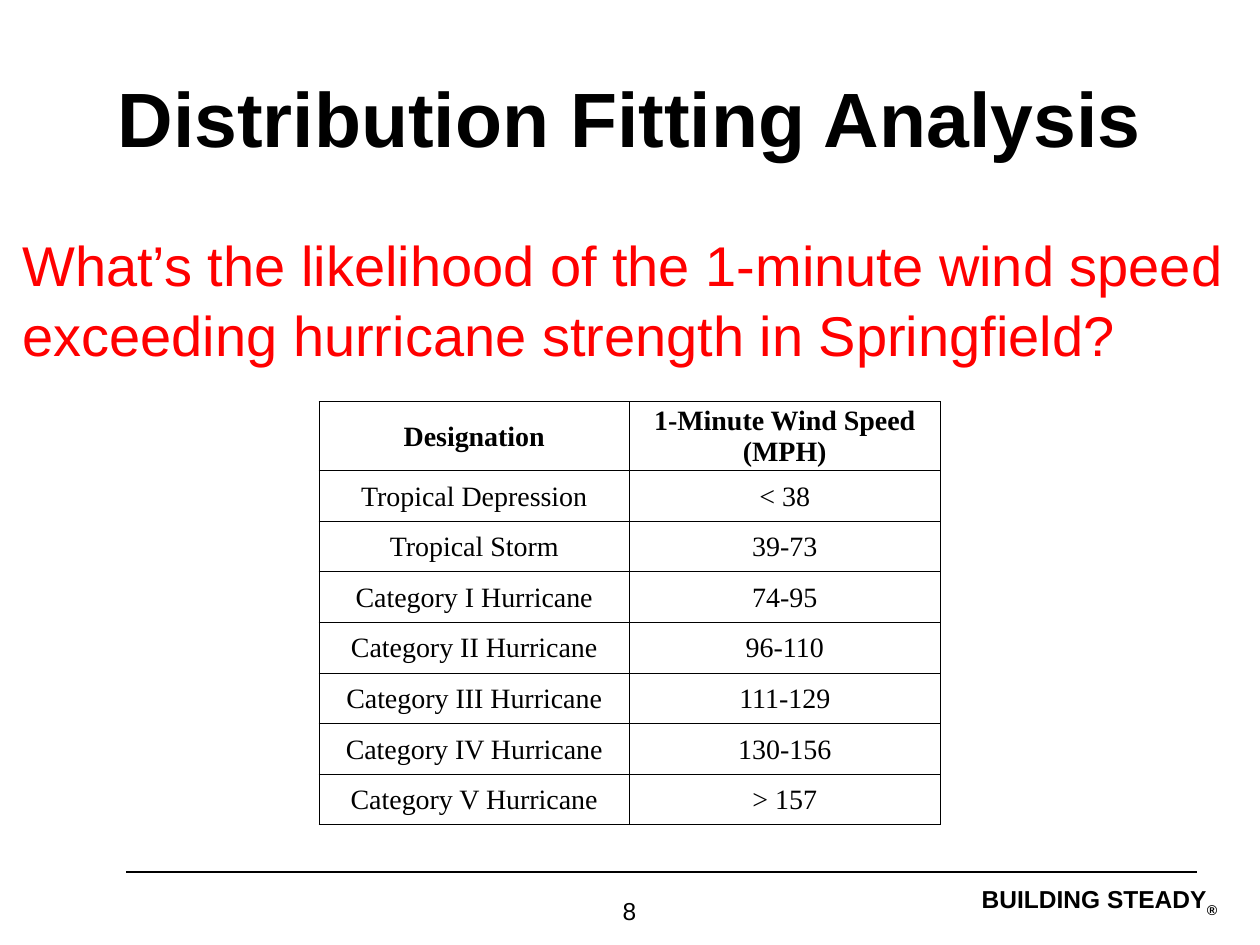
"""Build the hurricane wind speed slide."""
import lxml.etree
import pptx
import pptx.dml.color
import pptx.enum.shapes
import pptx.enum.text
import pptx.oxml.ns
import pptx.util

Cm = pptx.util.Cm
Pt = pptx.util.Pt
ALIGN = pptx.enum.text.PP_ALIGN
ANCHOR = pptx.enum.text.MSO_ANCHOR
BLACK = "000000"
RED = "FF0000"

WIND_SPEEDS = [
    ("Designation", "1-Minute Wind Speed\n(MPH)"),
    ("Tropical Depression", "< 38"),
    ("Tropical Storm", "39-73"),
    ("Category I Hurricane", "74-95"),
    ("Category II Hurricane", "96-110"),
    ("Category III Hurricane", "111-129"),
    ("Category IV Hurricane", "130-156"),
    ("Category V Hurricane", "> 157"),
]


def color(value):
    return pptx.dml.color.RGBColor.from_string(value)


def add_xml(parent, tag, **attributes):
    return lxml.etree.SubElement(parent, pptx.oxml.ns.qn(tag), **attributes)


class SlideBuilder:
    def __init__(self, page):
        self.page = page
        self.text_font = "Arial"
        self.table_font = "Times New Roman"

    def format_span(self, span, size, name, bold=False, fill=BLACK):
        span.font.size = Pt(size)
        span.font.name = name
        span.font.bold = bold
        span.font.color.rgb = color(fill)

    def text(self, place, content, size, align=ALIGN.LEFT, bold=False, fill=BLACK,
             anchor=ANCHOR.TOP, padded=True, spacing=None):
        box = self.page.shapes.add_textbox(*map(Cm, place))
        frame = box.text_frame
        frame.word_wrap = True
        frame.vertical_anchor = anchor
        if not padded:
            frame.margin_left = frame.margin_right = 0
            frame.margin_top = frame.margin_bottom = 0
        frame.text = content
        para = frame.paragraphs[0]
        para.alignment = align
        para.line_spacing = spacing
        self.format_span(para.runs[0], size, self.text_font, bold, fill)
        return para

    def subscript(self, para, content, size):
        span = para.add_run()
        span.text = content
        self.format_span(span, size, self.text_font, bold=True)
        span.font._element.set("baseline", "-25000")

    def line(self, left, right, height):
        rule = self.page.shapes.add_connector(
            pptx.enum.shapes.MSO_CONNECTOR.STRAIGHT,
            Cm(left), Cm(height), Cm(right), Cm(height))
        rule.line.color.rgb = color(BLACK)
        rule.line.width = Pt(0.75)
        add_xml(rule._element.spPr, "a:effectLst")

    def borders(self, cell, width):
        properties = cell._tc.get_or_add_tcPr()
        for side in ("a:lnL", "a:lnR", "a:lnT", "a:lnB"):
            edge = add_xml(properties, side, w=str(Pt(width)))
            add_xml(add_xml(edge, "a:solidFill"), "a:srgbClr", val=BLACK)

    def cell(self, cell, content, bold):
        self.borders(cell, 0.5)
        cell.fill.background()
        cell.vertical_anchor = ANCHOR.MIDDLE
        cell.margin_left = cell.margin_right = cell.margin_top = Cm(0.03)
        cell.margin_bottom = 0
        cell.text_frame.text = content
        for para in cell.text_frame.paragraphs:
            para.alignment = ALIGN.CENTER
            self.format_span(para.runs[0], 16, self.table_font, bold)

    def table(self, left, top, column_width, header_height, row_height, rows):
        columns = len(rows[0])
        height = header_height + row_height * (len(rows) - 1)
        table = self.page.shapes.add_table(
            len(rows), columns, Cm(left), Cm(top),
            Cm(column_width * columns), Cm(height)).table
        table.first_row = table.horz_banding = False
        for column in table.columns:
            column.width = Cm(column_width)
        for index, values in enumerate(rows):
            table.rows[index].height = Cm(row_height if index else header_height)
            for position, content in enumerate(values):
                self.cell(table.cell(index, position), content, bold=index == 0)


def main():
    deck = pptx.Presentation()
    deck.slide_width, deck.slide_height = Cm(25.4), Cm(19.05)
    builder = SlideBuilder(deck.slides.add_slide(deck.slide_layouts[6]))

    motto = builder.text((17.3, 17.83, 7.24, 0.58), "BUILDING STEADY", 14,
                         ALIGN.RIGHT, bold=True, padded=False)
    builder.subscript(motto, "®", 14)
    builder.line(2.54, 24.13, 17.58)
    builder.text((0.2, 4.45, 24.97, 10.8),
                 "What’s the likelihood of the 1-minute wind speed "
                 "exceeding hurricane strength in Springfield?",
                 32, fill=RED, spacing=1.05)
    builder.text((9.73, 17.93, 5.92, 0.89), "8", 14, ALIGN.CENTER)
    builder.text((1.27, 0.76, 22.86, 3.18), "Distribution Fitting Analysis", 44,
                 ALIGN.CENTER, bold=True, anchor=ANCHOR.MIDDLE)
    builder.table(6.43, 8.1, 6.26, 1.26, 1.02, WIND_SPEEDS)
    deck.save("out.pptx")


if __name__ == "__main__":
    main()
